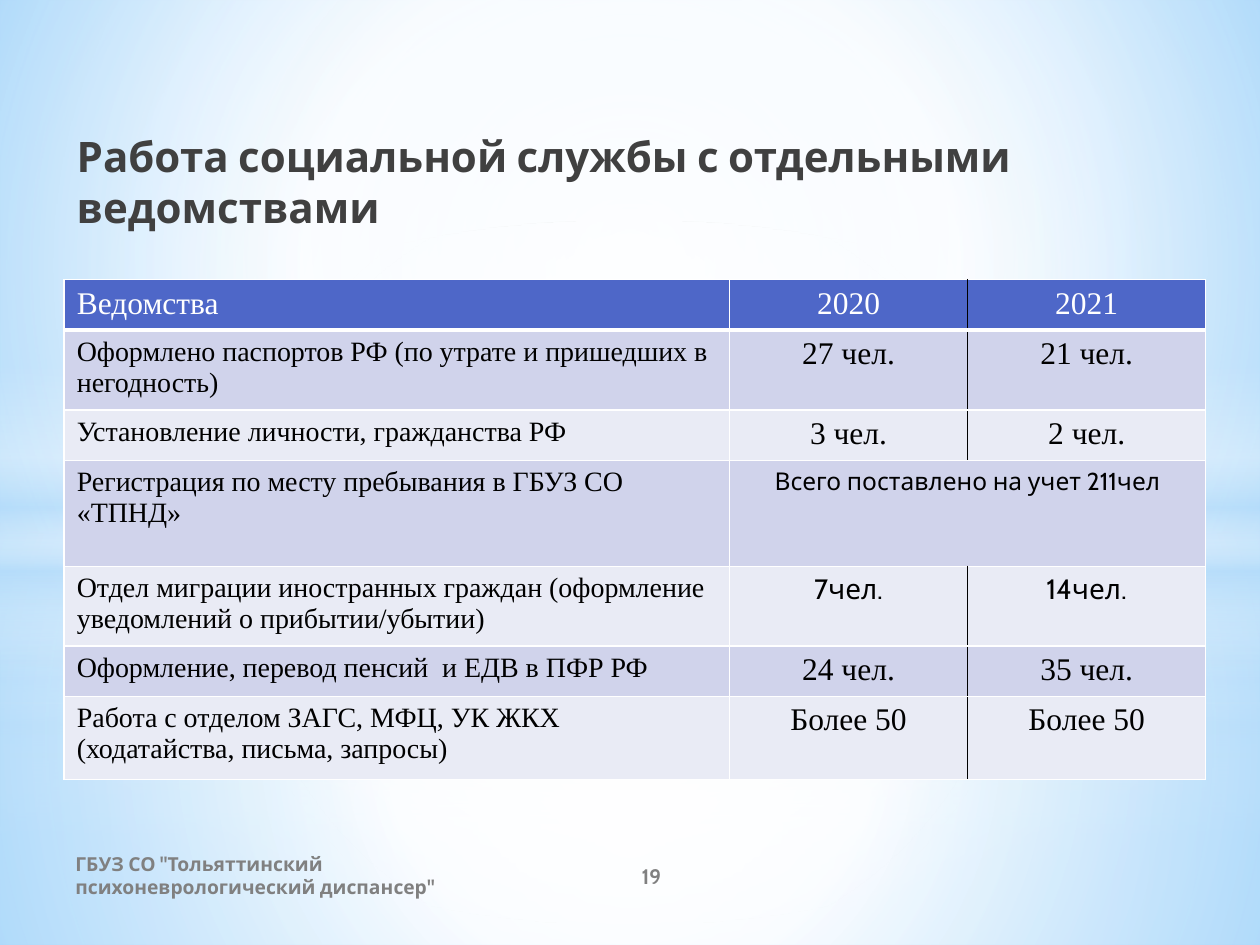
from lxml import etree
from pptx import Presentation
from pptx import util as u
from pptx.dml.color import RGBColor
from pptx.enum import shapes, text
from pptx.oxml import parse_xml
from pptx.oxml.ns import nsdecls, qn

WHITE, BLACK, SKY = "FFFFFF", "000000", "B4DCFA"
HEADER, BANDS = "4E67C8", ("D0D3EB", "E9EBF5")
SERIF, SANS = "Times New Roman", "Cabin"
LEFT, CENTER = text.PP_ALIGN.LEFT, text.PP_ALIGN.CENTER
MIDDLE = (50, 50, 50, 50)


def rgb(value):
    return RGBColor.from_string(value)


def gradient(stops, focus=None):
    """Stops are (position %, colour, opacity %); no focus means top to bottom."""
    fill = parse_xml(f'<a:gradFill {nsdecls("a")} rotWithShape="1"/>')
    stop_list = etree.SubElement(fill, qn("a:gsLst"))
    for position, color, opacity in stops:
        stop = etree.SubElement(stop_list, qn("a:gs"), pos=str(position * 1000))
        tint = etree.SubElement(stop, qn("a:srgbClr"), val=color)
        if opacity < 100:
            etree.SubElement(tint, qn("a:alpha"), val=str(opacity * 1000))
    if focus:
        radial = etree.SubElement(fill, qn("a:path"), {"path": "circle"})
        edges = {side: str(v * 1000) for side, v in zip("ltrb", focus)}
        etree.SubElement(radial, qn("a:fillToRect"), edges)
    else:
        etree.SubElement(fill, qn("a:lin"), ang="5400000", scaled="0")
    return fill


class SlideBuilder:
    def __init__(self, s, font=SANS):
        self.s, self.font = s, font

    def background(self, stops, focus):
        self.s.background.fill.solid()
        props = self.s._element.xpath(".//p:bgPr")[0]
        props.replace(props[0], gradient(stops, focus))

    def glow(self, top, height, stops, focus=None, kind=shapes.MSO_SHAPE.RECTANGLE):
        sp = self.s.shapes.add_shape(kind, 0, u.Inches(top), u.Inches(10), u.Inches(height))
        sp.shadow.inherit = False
        sp.line.fill.background()
        sp.fill.solid()
        props = sp._element.spPr
        props.replace(props.find(qn("a:solidFill")), gradient(stops, focus))

    def set_text(self, tf, content, size, color, font=None, align=LEFT, bold=False):
        p = tf.paragraphs[0]
        p.alignment = align
        p.font.name, p.font.size, p.font.bold = font or self.font, u.Pt(size), bold
        p.font.color.rgb = rgb(color)
        p.add_run().text = content

    def label(self, box, content, size, color, align=LEFT, anchor=text.MSO_ANCHOR.TOP):
        tf = self.s.shapes.add_textbox(*map(u.Inches, box)).text_frame
        tf.word_wrap = True
        tf.vertical_anchor = anchor
        self.set_text(tf, content, size, color, align=align, bold=True)

    def borders(self, cell, left, right, bottom_width):
        sides = (("L", left, 1), ("R", right, 1), ("T", WHITE, 1), ("B", WHITE, bottom_width))
        props = cell._tc.get_or_add_tcPr()
        for i, (side, color, width) in enumerate(sides):
            props.insert(i, parse_xml(
                f'<a:ln{side} {nsdecls("a")} w="{u.Pt(width)}"><a:solidFill>'
                f'<a:srgbClr val="{color}"/></a:solidFill></a:ln{side}>'))

    def table(self, box, widths, rows):
        """Rows are (height, name, values, value size, value font)."""
        table = self.s.shapes.add_table(len(rows), len(widths), *map(u.Inches, box)).table
        for column, width in zip(table.columns, widths):
            column.width = u.Inches(width)
        for r, (height, name, values, size, font) in enumerate(rows):
            table.rows[r].height = u.Inches(height)
            merged = len(values) == 1
            if merged:
                table.cell(r, 1).merge(table.cell(r, 2))
            for c in range(len(widths)):
                cell = table.cell(r, c)
                cell.fill.solid()
                cell.fill.fore_color.rgb = rgb(BANDS[(r - 1) % 2] if r else HEADER)
                self.borders(cell,
                             BLACK if c == 2 and not merged else WHITE,
                             BLACK if c == 1 and not merged else WHITE,
                             1 if r else 3)
            color = BLACK if r else WHITE
            self.set_text(table.cell(r, 0).text_frame, name, 16 if r else 18, color, SERIF)
            for c, value in enumerate(values, 1):
                self.set_text(table.cell(r, c).text_frame, value, size, color, font, CENTER)


def main():
    prs = Presentation()
    prs.slide_width, prs.slide_height = u.Inches(10), u.Inches(7.5)
    slide = SlideBuilder(prs.slides.add_slide(prs.slide_layouts[6]))

    # Background: two layers of lower glow, upper glow, light band and bright oval
    slide.background([(0, "9ED5FF", 100), (60, WHITE, 100), (100, "5BB9FF", 100)],
                     (20, 10, 20, 60))
    band = [(0, WHITE, 0), (29, WHITE, 30), (45, SKY, 40),
            (55, WHITE, 26), (65, SKY, 60), (100, WHITE, 0)]
    for horizon, band_top, extra, oval_end in ((5.58, 4.12, 0, 56), (4.23, 2.9, 1, 54)):
        slide.glow(horizon, 7.5 - horizon,
                   [(0, WHITE, 91 + extra), (37, WHITE, 76 + extra), (100, SKY, 79 + extra)],
                   MIDDLE)
        slide.glow(0, horizon,
                   [(0, WHITE, 89 + extra), (48, WHITE, 62 + extra), (100, SKY, 79 + extra)],
                   MIDDLE)
        slide.glow(band_top, 2.5, band)
        slide.glow(1.75, 5.58, [(0, WHITE, 100), (oval_end, WHITE, 0)], MIDDLE,
                   shapes.MSO_SHAPE.OVAL)

    # Footer and slide number
    middle = text.MSO_ANCHOR.MIDDLE
    slide.label((0.5, 6.75, 3.67, 0.4),
                'ГБУЗ СО "Тольяттинский психоневрологический диспансер"',
                11, "808080", anchor=middle)
    slide.label((4.17, 6.75, 2, 0.4), "19", 12, "808080", CENTER, middle)

    # Table of departments
    slide.table((0.51, 2.22, 9.06, 3.8), (5.28, 1.89, 1.89), [
        (0.37, "Ведомства", ("2020", "2021"), 18, SERIF),
        (0.59, "Оформлено паспортов РФ (по утрате и пришедших в негодность)",
         ("27 чел.", "21 чел."), 18, SERIF),
        (0.37, "Установление личности, гражданства РФ", ("3 чел.", "2 чел."), 18, SERIF),
        (0.84, "Регистрация по месту пребывания в ГБУЗ СО «ТПНД»",
         ("Всего поставлено на учет 211чел",), 14, SANS),
        (0.59, "Отдел миграции иностранных граждан (оформление уведомлений о прибытии/убытии)",
         ("7чел.", "14чел."), 16, SANS),
        (0.37, "Оформление, перевод пенсий  и ЕДВ в ПФР РФ", ("24 чел.", "35 чел."), 18, SERIF),
        (0.66, "Работа с отделом ЗАГС, МФЦ, УК ЖКХ (ходатайства, письма, запросы)",
         ("Более 50", "Более 50"), 18, SERIF),
    ])

    # Title
    slide.label((0.51, 0.99, 8.9, 0.91),
                "Работа социальной службы с отдельными ведомствами", 24, "404040")

    prs.save("out.pptx")


if __name__ == "__main__":
    main()
